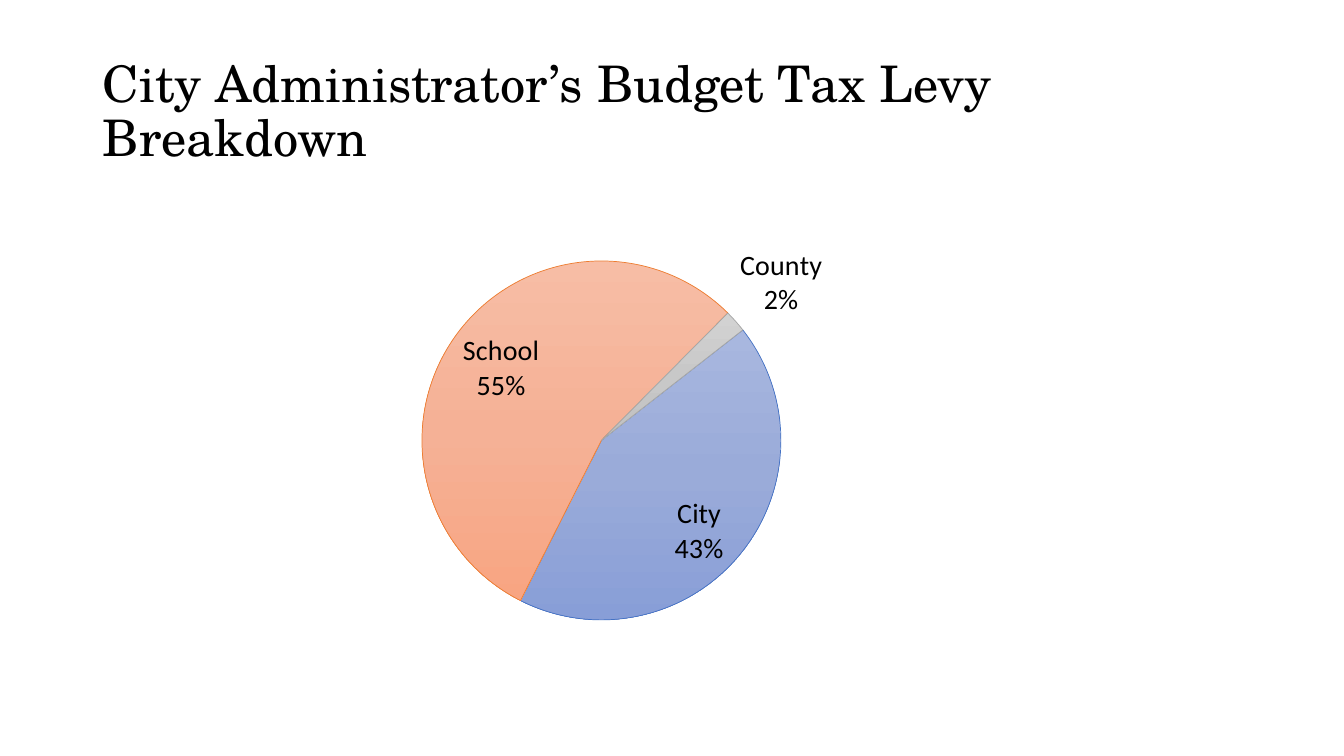
"""Build the tax levy breakdown slide."""
import copy
import dataclasses
import typing

import lxml.etree
import pptx
import pptx.chart.data
import pptx.dml.color
import pptx.enum.chart
import pptx.enum.text
import pptx.util

PX_PER_INCH = 100.8
BLANK_LAYOUT = 6
START_ANGLE = 52
BLACK = "000000"


@dataclasses.dataclass(frozen=True)
class Box:
    """Hold a rectangle in px."""
    left: int
    top: int
    width: int
    height: int


@dataclasses.dataclass(frozen=True)
class Levy:
    """Hold one share of the tax levy and its colours."""
    name: str
    percent: int
    gradient: tuple[str, str, str]
    outline: str


TITLE_BOX = Box(93, 40, 1159, 146)
CHART_BOX = Box(313, 171, 551, 462)
PIE_BOX = Box(422, 261, 359, 359)
LEVIES = (
    Levy("City", 43, ("A8B7DF", "9AABD9", "889ED7"), "4472C4"),
    Levy("School", 55, ("F7BDA5", "F5B196", "F8A582"), "ED7D31"),
    Levy("County", 2, ("D2D2D2", "C8C8C8", "C0C0C0"), "A5A5A5"),
)


def px(length: int) -> int:
    """Turn px into EMU."""
    return round(length * pptx.util.Inches(1) / PX_PER_INCH)


def place(box: Box) -> tuple[int, ...]:
    """Return a box as EMU lengths."""
    return tuple(px(length) for length in dataclasses.astuple(box))


def colour(value: str) -> pptx.dml.color.RGBColor:
    """Turn a hex string into a colour."""
    return pptx.dml.color.RGBColor.from_string(value)


def apply(target: typing.Any, values: dict[str, typing.Any]) -> None:
    """Set each attribute of the target."""
    for name, value in values.items():
        setattr(target, name, value)


def style_font(font: typing.Any, name: str, size: int) -> None:
    """Set the typeface, size and black colour."""
    apply(font, {"name": name, "size": pptx.util.Pt(size)})
    font.color.rgb = colour(BLACK)


def add_title(slide: typing.Any) -> None:
    """Add the slide heading."""
    frame = slide.shapes.add_textbox(*place(TITLE_BOX)).text_frame
    apply(frame, {"word_wrap": True,
                  "vertical_anchor": pptx.enum.text.MSO_ANCHOR.MIDDLE})
    heading = frame.paragraphs[0]
    heading.line_spacing = 0.9
    words = heading.add_run()
    words.text = "City Administrator’s Budget Tax Levy Breakdown"
    style_font(words.font, "TeX Gyre Schola", 36)


def add_child(parent: typing.Any, tag: str, value: str) -> typing.Any:
    """Append a chart element with a val attribute."""
    namespace = lxml.etree.QName(parent).namespace
    return lxml.etree.SubElement(parent, f"{{{namespace}}}{tag}", val=value)


def set_pie_layout(plot_area: typing.Any) -> None:
    """Fix the pie's place within the chart."""
    namespace = lxml.etree.QName(plot_area).namespace
    for layout in plot_area.findall(f"{{{namespace}}}layout"):
        plot_area.remove(layout)
    layout = lxml.etree.Element(f"{{{namespace}}}layout")
    plot_area.insert(0, layout)
    manual = lxml.etree.SubElement(layout, f"{{{namespace}}}manualLayout")
    fractions = {
        "x": (PIE_BOX.left - CHART_BOX.left) / CHART_BOX.width,
        "y": (PIE_BOX.top - CHART_BOX.top) / CHART_BOX.height,
        "w": PIE_BOX.width / CHART_BOX.width,
        "h": PIE_BOX.height / CHART_BOX.height,
    }
    settings = {"layoutTarget": "inner", "xMode": "edge", "yMode": "edge"}
    settings.update({tag: f"{value:.4f}" for tag, value in fractions.items()})
    for tag, value in settings.items():
        add_child(manual, tag, value)


def set_start_angle(pie: typing.Any) -> None:
    """Turn the first slice to its starting angle."""
    namespace = lxml.etree.QName(pie).namespace
    for angle in pie.findall(f"{{{namespace}}}firstSliceAng"):
        pie.remove(angle)
    add_child(pie, "firstSliceAng", str(START_ANGLE))


def style_slice(look: typing.Any, levy: Levy) -> None:
    """Give a slice its gradient and outline."""
    look.fill.gradient()
    look.fill.gradient_angle = 270
    stops = look.fill.gradient_stops
    first = stops[0]._gs
    first.addnext(copy.deepcopy(first))
    for index, shade in enumerate(levy.gradient):
        stops[index].position = index / 2
        stops[index].color.rgb = colour(shade)
    look.line.width = pptx.util.Pt(0.5)
    look.line.color.rgb = colour(levy.outline)


def style_labels(plot: typing.Any) -> None:
    """Show each category above its percentage."""
    plot.has_data_labels = True
    labels = plot.data_labels
    apply(labels, {
        "show_category_name": True,
        "show_percentage": True,
        "show_value": False,
        "number_format": "0%",
        "number_format_is_linked": False,
        "position": pptx.enum.chart.XL_LABEL_POSITION.BEST_FIT,
    })
    style_font(labels.font, "Calibri", 20)
    element = labels._element
    namespace = lxml.etree.QName(element).namespace
    separator = lxml.etree.Element(f"{{{namespace}}}separator")
    separator.text = "\n"
    element.find(f"{{{namespace}}}showPercent").addnext(separator)
    bubble = element.find(f"{{{namespace}}}showBubbleSize")
    if bubble is not None:
        bubble.addnext(separator)


def add_levy_pie(slide: typing.Any) -> None:
    """Add the pie of levy shares."""
    shares = pptx.chart.data.CategoryChartData()
    shares.categories = [levy.name for levy in LEVIES]
    shares.add_series("Series 1", [levy.percent for levy in LEVIES])
    chart = slide.shapes.add_chart(
        pptx.enum.chart.XL_CHART_TYPE.PIE, *place(CHART_BOX), shares).chart
    apply(chart, {"has_legend": False, "has_title": False})
    style_font(chart.font, "Calibri", 10)
    plot = chart.plots[0]
    plot.vary_by_categories = True
    style_labels(plot)
    for index, levy in enumerate(LEVIES):
        style_slice(plot.series[0].points[index].format, levy)
    set_start_angle(plot._element)
    set_pie_layout(plot._element.getparent())


def main() -> None:
    """Build and save the slide."""
    deck = pptx.Presentation()
    apply(deck, {"slide_width": px(1344), "slide_height": px(756)})
    slide = deck.slides.add_slide(deck.slide_layouts[BLANK_LAYOUT])
    add_title(slide)
    add_levy_pie(slide)
    deck.save("out.pptx")


if __name__ == "__main__":
    main()
